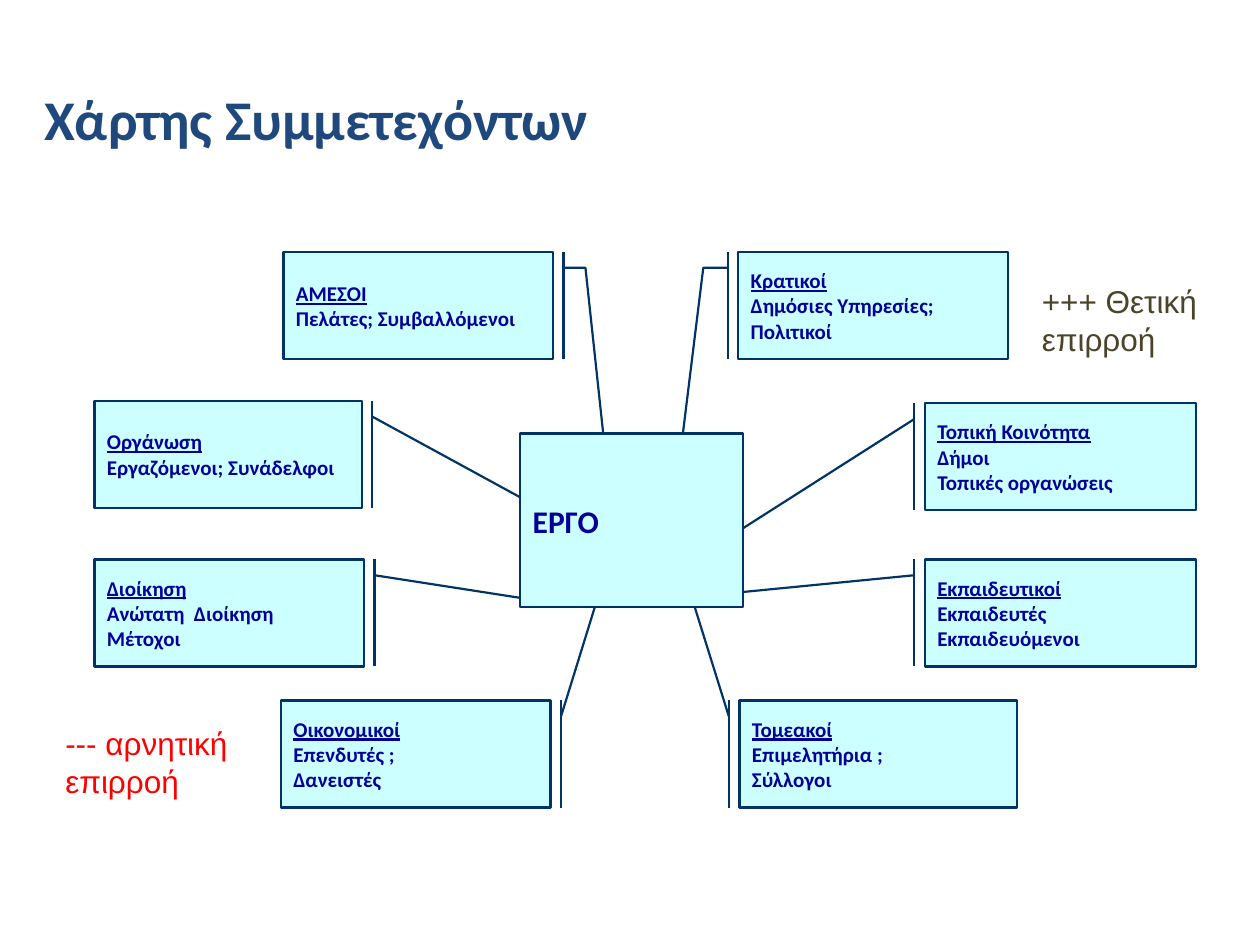
"""Builds the stakeholder map slide: a project surrounded by eight callouts."""
from dataclasses import dataclass

from pptx import Presentation
from pptx.dml.color import RGBColor as Rgb
from pptx.enum.shapes import MSO_SHAPE as Shape
from pptx.enum.text import MSO_ANCHOR as Anchor, PP_ALIGN as Align
from pptx.util import Inches, Pt


@dataclass(frozen=True)
class Theme:
    fill: Rgb = Rgb.from_string("CCFFFF")
    line: Rgb = Rgb.from_string("003366")
    ink: Rgb = Rgb.from_string("000099")
    title: Rgb = Rgb.from_string("1F497D")
    positive: Rgb = Rgb.from_string("4A452A")
    negative: Rgb = Rgb.from_string("FF0000")
    body_font: str = "Calibri"
    note_font: str = "Arial"
    title_size: int = 32
    large_size: int = 18
    small_size: int = 12
    line_width: float = 1.25


theme = Theme()
deck = Presentation()
deck.slide_width, deck.slide_height = Inches(10), Inches(7.5)
slide = deck.slides.add_slide(deck.slide_layouts[5])


def share(left, top, width, height):
    across, down = deck.slide_width / 100, deck.slide_height / 100
    return [round(v) for v in (left * across, top * down, width * across, height * down)]


def write(holder, lines, size, color, font=theme.body_font, bold=True, headed=False, anchor=Anchor.MIDDLE):
    frame = holder.text_frame
    frame.vertical_anchor = anchor
    for index, line in enumerate(lines):
        paragraph = frame.add_paragraph() if index else frame.paragraphs[0]
        paragraph.alignment = Align.LEFT
        run = paragraph.add_run()
        run.text = line
        run.font.size, run.font.name, run.font.bold = Pt(size), font, bold
        run.font.color.rgb = color
        if headed:
            run.font.underline = index == 0


heading = slide.shapes.title
heading.left, heading.top, heading.width, heading.height = share(2.5, 7.73, 64.6, 9.47)
write(heading, ["Χάρτης Συμμετεχόντων"], theme.title_size, theme.title)

callout_height, bar_start = 11.33, 0.148
right_bar, left_bar = 1.039, -0.039
straight = Shape.LINE_CALLOUT_1_BORDER_AND_ACCENT_BAR
bent = Shape.LINE_CALLOUT_2_BORDER_AND_ACCENT_BAR
stakeholders = [
    (7.5, 59.2, 21.4, straight, right_bar, [0.435, 1.772],
     ["Διοίκηση", "Ανώτατη  Διοίκηση", "Μέτοχοι"]),
    (7.5, 42.4, 21.2, straight, right_bar, [1.138, 1.766],
     ["Οργάνωση", "Εργαζόμενοι; Συνάδελφοι"]),
    (73.4, 59.2, 21.5, straight, left_bar, [0.322, -0.741],
     ["Εκπαιδευτικοί", "Εκπαιδευτές", "Εκπαιδευόμενοι"]),
    (73.4, 42.67, 21.5, straight, left_bar, [1.279, -0.74],
     ["Τοπική Κοινότητα", "Δήμοι", "Τοπικές οργανώσεις"]),
    (58.6, 26.67, 21.4, bent, left_bar, [bar_start, -0.13, 2.197, -0.23],
     ["Κρατικοί", "Δημόσιες Υπηρεσίες; Πολιτικοί"]),
    (22.5, 26.67, 21.4, bent, right_bar, [bar_start, 1.12, 2.193, 1.207],
     ["ΑΜΕΣΟΙ", "Πελάτες; Συμβαλλόμενοι"]),
    (58.7, 74.13, 22, straight, left_bar, [-1.115, -0.191],
     ["Τομεακοί", "Επιμελητήρια ;", "Σύλλογοι"]),
    (22.3, 74.13, 21.4, straight, right_bar, [-0.969, 1.176],
     ["Οικονομικοί", "Επενδυτές ;", "Δανειστές"]),
]

boxes = []
for left, top, width, kind, bar, pointer, lines in stakeholders:
    callout = slide.shapes.add_shape(kind, *share(left, top, width, callout_height))
    for index, value in enumerate([bar_start, bar, *pointer]):
        callout.adjustments[index] = value
    write(callout, lines, theme.small_size, theme.ink, headed=True)
    boxes.append(callout)

project = slide.shapes.add_shape(Shape.RECTANGLE, *share(41.3, 45.87, 17.7, 18.4))
write(project, ["ΈΡΓΟ"], theme.large_size, theme.ink)

for box in [*boxes, project]:
    box.shadow.inherit = False
    box.fill.solid()
    box.fill.fore_color.rgb = theme.fill
    box.line.color.rgb = theme.line
    box.line.width = Pt(theme.line_width)

influences = [
    (81.7, 29.2, 15.1, "+++ Θετική", theme.positive),
    (4.2, 76, 15.7, "--- αρνητική", theme.negative),
]
for left, top, width, sign, color in influences:
    note = slide.shapes.add_textbox(*share(left, top, width, 9.47))
    note.text_frame.word_wrap = False
    write(note, [sign, "επιρροή"], theme.large_size, color, theme.note_font, bold=False, anchor=Anchor.TOP)

deck.save("out.pptx")
